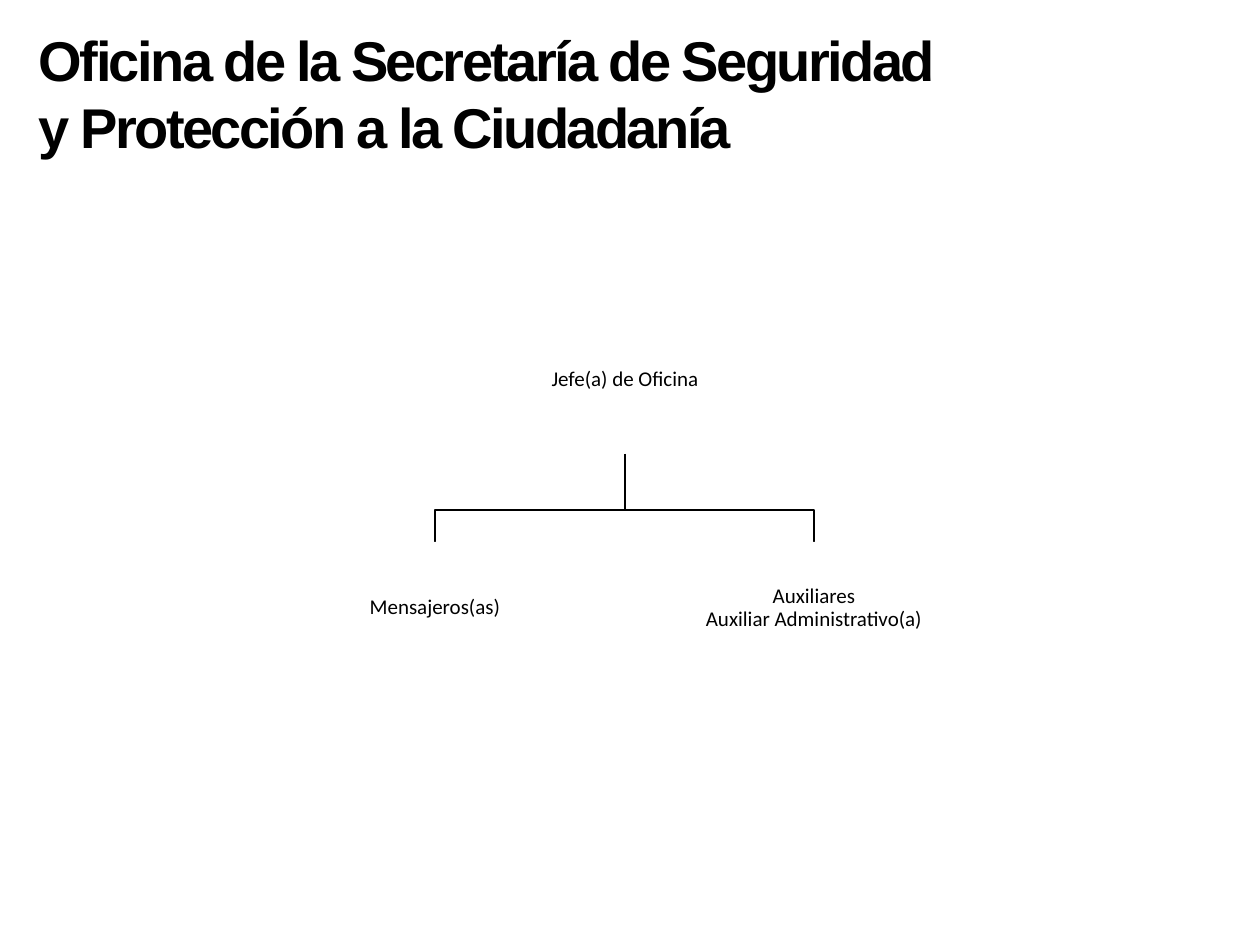
from pptx import Presentation
from pptx.dml.color import RGBColor as RGB
from pptx.enum.shapes import MSO_SHAPE as SHAPE
from pptx.enum.text import MSO_ANCHOR as ANCHOR, MSO_AUTO_SIZE as FIT, PP_ALIGN as ALIGN
from pptx.util import Emu, Pt

SCALE = 914400 / 126  # EMU per px
COLORS = {"text": "000000", "line": "000000", "box": "FFFFFF"}


def px(n):
    return Emu(round(n * SCALE))


def color(name):
    return RGB.from_string(COLORS[name])


def set_text(tf, text, font="Calibri", size=12, bold=False, align=ALIGN.CENTER,
             anchor=ANCHOR.MIDDLE, leading=0.9, spacing=None, margins=(1, 1)):
    """Fill a text frame, one paragraph for each line of text."""
    tf.word_wrap = True
    tf.auto_size = FIT.NONE
    tf.vertical_anchor = anchor
    tf.margin_left = tf.margin_right = px(margins[0])
    tf.margin_top = tf.margin_bottom = px(margins[1])
    for i, line in enumerate(text.split("\n")):
        p = tf.add_paragraph() if i else tf.paragraphs[0]
        p.alignment, p.line_spacing = align, leading
        r = p.add_run()
        r.text = line
        r.font.name, r.font.size, r.font.bold = font, Pt(size), bold
        r.font.color.rgb = color("text")
        if spacing is not None:
            r._r.get_or_add_rPr().set("spc", str(round(spacing * 100)))


def add_title(s, text, x, y, w, h):
    sp = s.shapes.title
    sp.left, sp.top, sp.width, sp.height = map(px, (x, y, w, h))
    set_text(sp.text_frame, text, font="Arial", size=32, bold=True, align=ALIGN.LEFT,
             anchor=ANCHOR.TOP, leading=1.0, spacing=-1.5, margins=(13, 6))


def add_post(s, text, center, y, w, h, filled=True):
    sp = s.shapes.add_shape(SHAPE.RECTANGLE, *map(px, (center - w / 2, y, w, h)))
    sp.shadow.inherit = False
    sp.line.fill.background()
    if filled:
        sp.fill.solid()
        sp.fill.fore_color.rgb = color("box")
    else:
        sp.fill.background()
    set_text(sp.text_frame, text)


def add_branch(s, x1, y1, x2, y2, bend):
    """Draw an elbow line from a parent down to a child."""
    fb = s.shapes.build_freeform(x1, y1, scale=SCALE)
    fb.add_line_segments([(x1, bend), (x2, bend), (x2, y2)], close=False)
    sp = fb.convert_to_shape()
    sp.shadow.inherit = False
    sp.fill.background()
    sp.line.color.rgb = color("line")
    sp.line.width = Pt(1)


def main():
    prs = Presentation()
    prs.slide_width, prs.slide_height = px(1260), px(945)
    s = prs.slides.add_slide(prs.slide_layouts[5])

    add_title(s, "Oficina de la Secretaría de Seguridad y Protección a la Ciudadanía",
              26, 19, 926, 149)

    # Organisation chart: one head, two posts below
    head_x, head_bottom, posts_top = 625, 454, 542
    posts = [(435, "Mensajeros(as)"),
             (814, "Auxiliares\nAuxiliar Administrativo(a)")]
    for x, _ in posts:
        add_branch(s, head_x, head_bottom, x, posts_top, bend=510)
    add_post(s, "Jefe(a) de Oficina", head_x, 305, 348, 149, filled=False)
    for x, text in posts:
        add_post(s, text, x, posts_top, 318, 132)

    prs.save("out.pptx")


if __name__ == "__main__":
    main()
